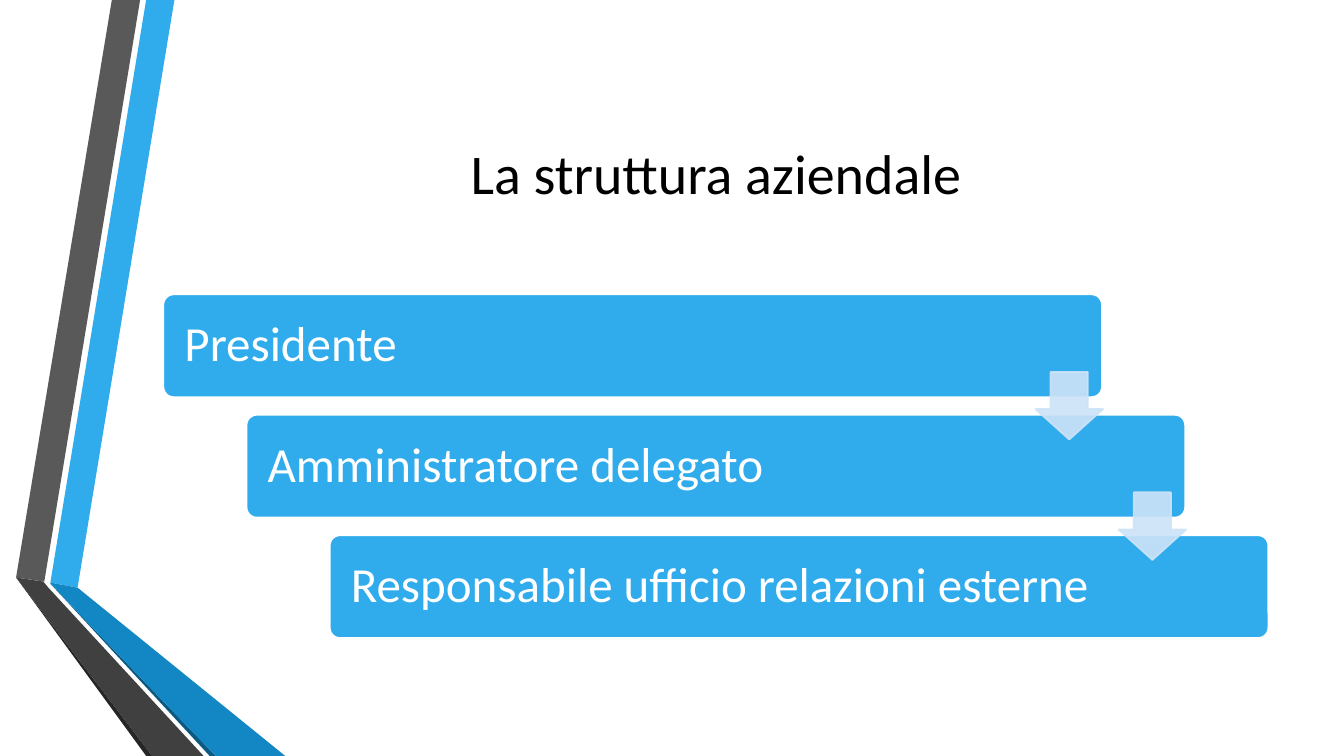
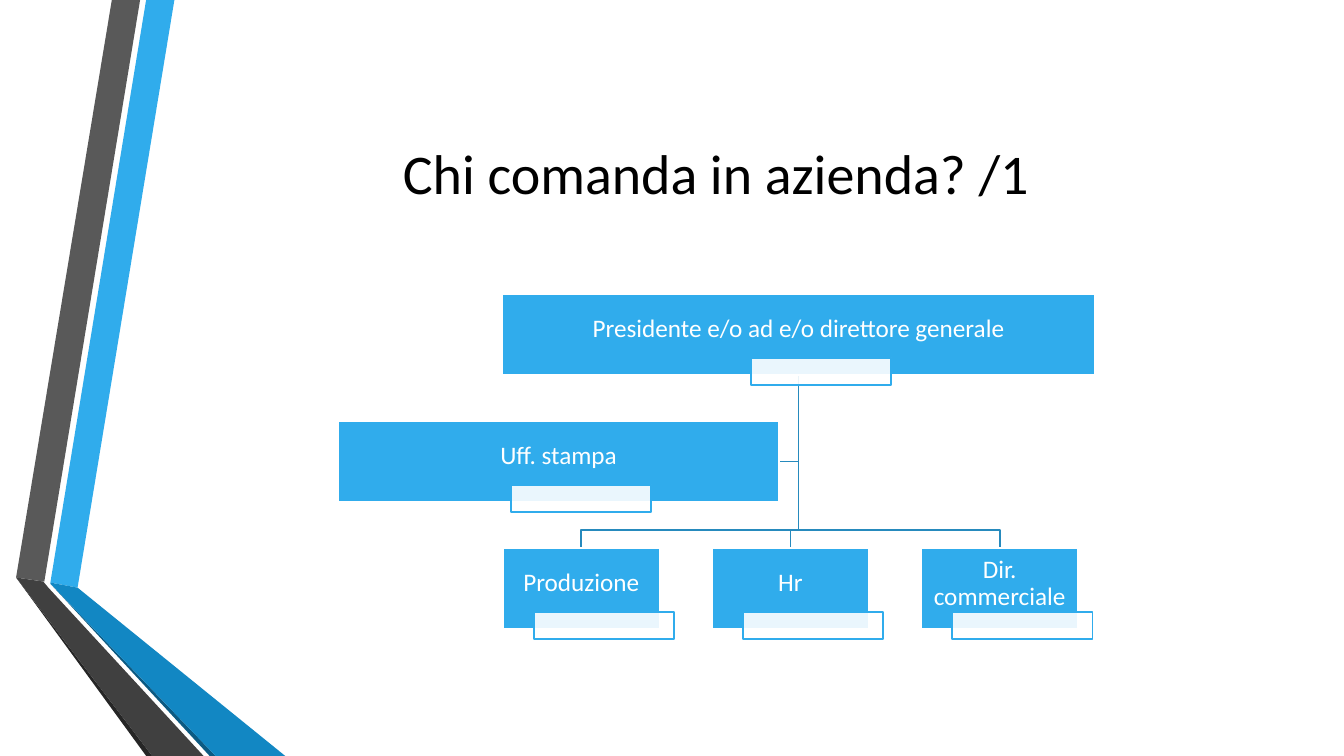
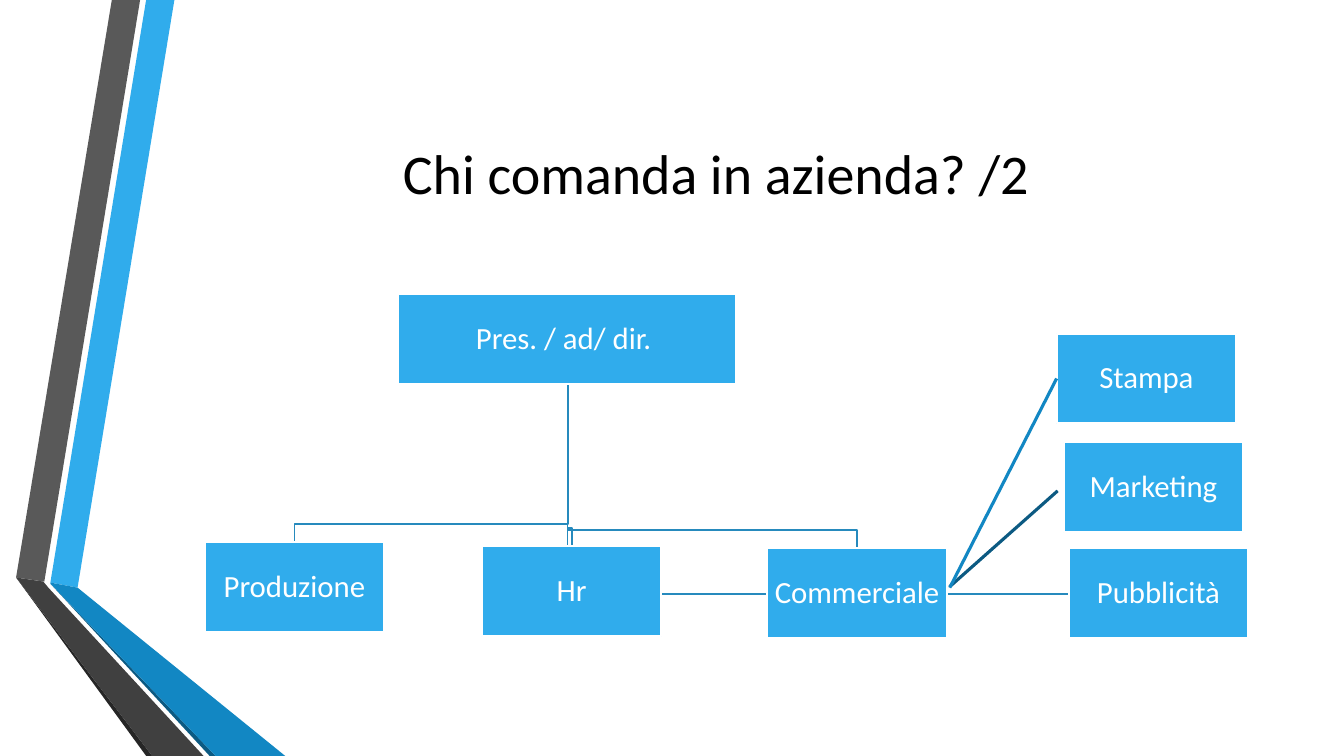
from dataclasses import dataclass

from lxml.etree import SubElement
from pptx import Presentation
from pptx.dml.color import RGBColor
from pptx.enum.shapes import MSO_CONNECTOR as Connector, MSO_SHAPE as Shape
from pptx.enum.text import MSO_ANCHOR as Anchor, PP_ALIGN as Align
from pptx.oxml.ns import qn
from pptx.util import Inches, Pt


@dataclass(frozen=True)
class Theme:
    font: str = "Calibri"
    ink: str = "000000"
    white: str = "FFFFFF"
    sky: str = "30ACEC"
    pale: str = "CDE3F8"
    link: str = "268ABD"
    blue: str = "1287C3"
    navy: str = "0C5A82"
    grey: str = "595959"
    dark: str = "404040"
    black: str = "262626"
    title_size: int = 40
    step_size: int = 35
    chart_size: int = 18
    unit_size: int = 22
    thin: float = 1.25
    thick: float = 2.25


THEME = Theme()

RIBBONS = (
    (THEME.sky, [(0.5, 5.78), (0.77, 5.83), (1.73, 0), (1.45, 0)]),
    (THEME.grey, [(1.39, 0), (1.11, 0), (0.16, 5.73), (0.44, 5.77)]),
    (THEME.black, [(0.16, 5.73), (1.45, 7.5), (1.51, 7.5)]),
    (THEME.navy, [(0.5, 5.79), (2.08, 7.5), (2.14, 7.5)]),
    (THEME.blue, [(0.5, 5.79), (2.14, 7.5), (2.83, 7.5), (0.77, 5.83), (0.5, 5.78)]),
    (THEME.dark, [(2.02, 7.5), (0.48, 5.83), (0.43, 5.77), (0.16, 5.73), (1.51, 7.5)]),
)


class Deck:
    """Holds the theme, the shared layout and the slide being drawn."""

    def __init__(self, theme):
        self.theme = theme
        self.deck = Presentation()
        self.deck.slide_width, self.deck.slide_height = Inches(13.33), Inches(7.5)
        self.layout = self.deck.slide_layouts[5]
        self.slide = None
        heading = self.layout.placeholders[0]
        heading.left, heading.top = Inches(1.62), Inches(0.75)
        heading.width, heading.height = Inches(10.96), Inches(1.92)

    def start(self, title):
        self.slide = self.deck.slides.add_slide(self.layout)
        heading = self.slide.shapes.title
        self.set_text(heading, title, self.theme.title_size, self.theme.ink, Align.CENTER)

    def ribbons(self, bands):
        for place, (color, points) in enumerate(bands, start=2):
            band = self.outline(points, True)
            self.paint(band, color)
            self.layout.shapes.element.insert(place, band.element)

    def outline(self, points, close):
        corners = [(Inches(x), Inches(y)) for x, y in points]
        builder = self.slide.shapes.build_freeform(*corners[0], scale=1.0)
        builder.add_line_segments(corners[1:], close=close)
        return builder.convert_to_shape()

    def paint(self, shape, fill=None, line=None, fill_alpha=100, line_alpha=100):
        shape.shadow.inherit = False
        self.tint(shape.fill, fill)
        self.tint(shape.line.fill, line)
        if line:
            shape.line.width = Pt(self.theme.thin)
        properties = shape.element.spPr
        for owner, alpha in ((properties, fill_alpha), (properties.find(qn("a:ln")), line_alpha)):
            if alpha < 100:
                color = owner.find(qn("a:solidFill")).find(qn("a:srgbClr"))
                SubElement(color, qn("a:alpha"), val=str(alpha * 1000))

    def tint(self, part, color):
        if color is None:
            part.background()
        else:
            part.solid()
            part.fore_color.rgb = RGBColor.from_string(color)

    def set_text(self, shape, text, size, color, align):
        frame = shape.text_frame
        frame.word_wrap = True
        frame.vertical_anchor = Anchor.MIDDLE
        paragraph = frame.paragraphs[0]
        paragraph.alignment = align
        run = paragraph.add_run()
        run.text = text
        run.font.name, run.font.size = self.theme.font, Pt(size)
        run.font.color.rgb = RGBColor.from_string(color)
        return paragraph

    def preset(self, kind, left, top, width, height, adjustments=()):
        bounds = map(Inches, (left, top, width, height))
        shape = self.slide.shapes.add_shape(kind, *bounds)
        for index, value in enumerate(adjustments):
            shape.adjustments[index] = value
        return shape

    def label(self, shape, text, size, align, insets):
        self.paint(shape, self.theme.sky, self.theme.white)
        self.set_text(shape, text, size, self.theme.white, align).line_spacing = 0.9
        frame = shape.text_frame
        frame.margin_left, frame.margin_top, frame.margin_right, frame.margin_bottom = map(Inches, insets)

    def step(self, text, left, top):
        bar = self.preset(Shape.ROUNDED_RECTANGLE, left, top, 9.31, 1.02, [0.1])
        self.label(bar, text, self.theme.step_size, Align.LEFT, [0.18] * 4)

    def down_arrow(self, left, top):
        arrow = self.preset(Shape.DOWN_ARROW, left, top, 0.67, 0.67, [0.55, 0.45])
        self.paint(arrow, self.theme.pale, self.theme.pale, 90, 90)

    def role(self, text, left, top, width):
        box = self.preset(Shape.RECTANGLE, left, top, width, 0.8)
        self.label(box, text, self.theme.chart_size, Align.CENTER, (0.01, 0.01, 0.01, 0.11))
        tag = self.preset(Shape.RECTANGLE, left + width / 2 - 0.47, top + 0.63, 1.39, 0.27)
        self.paint(tag, self.theme.white, self.theme.sky, fill_alpha=90)

    def unit(self, text, left, top, width=1.78):
        box = self.preset(Shape.RECTANGLE, left, top, width, 0.89)
        self.label(box, text, self.theme.unit_size, Align.CENTER, [0.02] * 4)
        return box

    def branch(self, *points):
        self.paint(self.outline(points, False), line=self.theme.link)

    def spoke(self, start, end, color, target=None):
        ends = map(Inches, (*start, *end))
        spoke = self.slide.shapes.add_connector(Connector.STRAIGHT, *ends)
        spoke.line.color.rgb = RGBColor.from_string(color)
        spoke.line.width = Pt(self.theme.thick)
        SubElement(spoke.element.spPr, qn("a:effectLst"))
        if target is not None:
            spoke.end_connect(target, 1)


def company_structure(deck):
    deck.start("La struttura aziendale")
    deck.ribbons(RIBBONS)
    shift, drop = 0.825, 1.195
    roles = ("Presidente", "Amministratore delegato", "Responsabile ufficio relazioni esterne")
    for level, role in enumerate(roles):
        deck.step(role, 1.62 + level * shift, 2.92 + level * drop)
    for level in range(len(roles) - 1):
        deck.down_arrow(10.27 + level * shift, 3.69 + level * drop)


def line_of_command(deck):
    deck.start("Chi comanda in azienda? /1")
    trunk, chief_bottom, bus, row, width = 7.92, 3.72, 5.26, 5.44, 1.55
    offices = [(name, 4.99 + column * 2.075)
               for column, name in enumerate(("Produzione", "Hr", "Dir. commerciale"))]
    deck.branch((trunk, chief_bottom), (trunk, 4.58), (7.73, 4.58))
    for _, left in reversed(offices):
        center = left + width / 2
        deck.branch((trunk, chief_bottom), (trunk, bus), (center, bus), (center, row))
    deck.role("Presidente e/o ad e/o direttore generale", 4.98, 2.92, 5.88)
    for name, left in offices:
        deck.role(name, left, row, width)
    deck.role("Uff. stampa", 3.35, 4.18, 4.38)


def communication_offices(deck):
    deck.start("Chi comanda in azienda? /2")
    trunk, chief_bottom = 5.63, 3.81
    offices = (("Produzione", 2.03, 5.38), ("Hr", 4.78, 5.42), ("Commerciale", 7.61, 5.44))
    deck.branch((trunk, chief_bottom), (trunk, 5.89), (10.6, 5.89))
    for _, left, top in reversed(offices):
        center, bus = left + 0.89, top - 0.18
        deck.branch((trunk, chief_bottom), (trunk, bus), (center, bus), (center, top))
    deck.unit("Pres. / ad/ dir. ", 3.95, 2.92, 3.35)
    for office in offices:
        deck.unit(*office)
    deck.unit("Pubblicità", 10.6, 5.44)
    deck.unit("Marketing", 10.55, 4.39)
    press = deck.unit("Stampa", 10.48, 3.31)
    deck.spoke((9.42, 5.82), (10.49, 4.87), THEME.navy)
    deck.spoke((9.42, 5.83), (10.49, 3.75), THEME.blue, press)


def main():
    deck = Deck(THEME)
    company_structure(deck)
    line_of_command(deck)
    communication_offices(deck)
    deck.deck.save("out.pptx")


if __name__ == "__main__":
    main()
